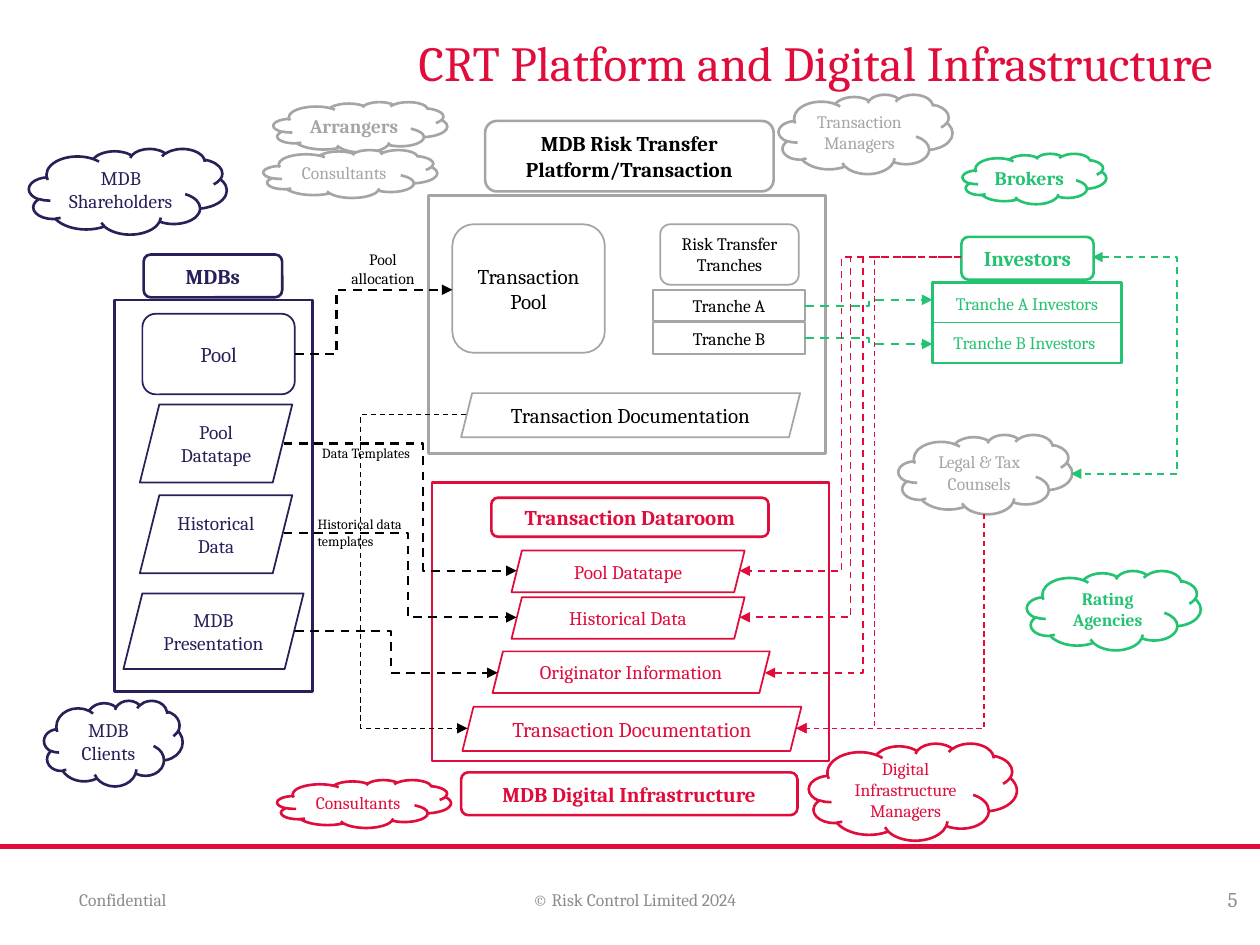
from lxml import etree
from pptx import Presentation
from pptx.dml.color import RGBColor
from pptx.enum.dml import MSO_LINE
from pptx.enum.shapes import MSO_CONNECTOR, MSO_SHAPE
from pptx.enum.text import MSO_ANCHOR, PP_ALIGN
from pptx.oxml.ns import qn
from pptx.util import Pt

PX = 9144
FONT = "Cambria"
COLORS = {
    "red": "E00D3C", "navy": "262159", "gray": "A5A5A5",
    "green": "24C371", "black": "000000", "white": "FFFFFF", "note": "8C8C8C",
}
RECT, ROUND = MSO_SHAPE.RECTANGLE, MSO_SHAPE.ROUNDED_RECTANGLE
SLANT, CLOUD = MSO_SHAPE.PARALLELOGRAM, MSO_SHAPE.CLOUD
STRAIGHT, ELBOW = MSO_CONNECTOR.STRAIGHT, MSO_CONNECTOR.ELBOW
DASH = MSO_LINE.DASH
LEFT, CENTER, RIGHT = PP_ALIGN.LEFT, PP_ALIGN.CENTER, PP_ALIGN.RIGHT
TOP, MIDDLE = MSO_ANCHOR.TOP, MSO_ANCHOR.MIDDLE


def emu(*sizes):
    return [size * PX for size in sizes]


def tint(name):
    return RGBColor.from_string(COLORS[name])


def write(shape, text, size, color, bold=False, align=CENTER, pad=(4, 4), anchor=MIDDLE):
    frame = shape.text_frame
    frame.word_wrap = True
    frame.vertical_anchor = anchor
    frame.margin_left = frame.margin_right = pad[0] * PX
    frame.margin_top = frame.margin_bottom = pad[1] * PX
    para = frame.paragraphs[0]
    para.text = text
    para.alignment = align
    font = para.font
    font.name, font.size, font.bold = FONT, Pt(size), bold
    font.color.rgb = tint(color)


def label(slide, box, text, size, color, **style):
    write(slide.shapes.add_textbox(*emu(*box)), text, size, color, **style)


def draw(slide, kind, box, color, width=1, fill=None):
    shape = slide.shapes.add_shape(kind, *emu(*box))
    shape.shadow.inherit = False
    if fill:
        shape.fill.solid()
        shape.fill.fore_color.rgb = tint(fill)
    else:
        shape.fill.background()
    shape.line.color.rgb = tint(color)
    shape.line.width = Pt(width)
    return shape


def link(slide, kind, ends, color, width):
    wire = slide.shapes.add_connector(kind, *emu(*ends))
    wire.line.color.rgb = tint(color)
    wire.line.width = Pt(width)
    etree.SubElement(wire._element.spPr, qn("a:effectLst"))
    return wire


def bend(slide, start, end, via, color, width, both=False):
    wire = link(slide, ELBOW, (*start, *end), color, width)
    wire.line.dash_style = DASH
    props = wire._element.spPr
    ratio = round(100000 * (via - start[0]) / (end[0] - start[0]))
    guides = props.find(qn("a:prstGeom")).find(qn("a:avLst"))
    etree.SubElement(guides, qn("a:gd"), name="adj1", fmla=f"val {ratio}")
    line = props.find(qn("a:ln"))
    for tag in ("a:headEnd", "a:tailEnd") if both else ("a:tailEnd",):
        etree.SubElement(line, qn(tag), type="triangle")


def header(slide, box, text, color, ink=None):
    shape = draw(slide, ROUND, box, color, 1.5, "white")
    write(shape, text, 12, ink or color, bold=True, pad=(10, 5))


def master(slide, x, y, w, h):
    link(slide, STRAIGHT, (x, y + 672, x + w, y + 672), "red", 2.5)
    notes = [
        (759, 233, "5", 12, RIGHT),
        (53, 233, "Confidential", 10, LEFT),
        (345, 317, "© Risk Control Limited 2024", 10, CENTER),
    ]
    for left, wide, text, size, align in notes:
        label(slide, (x + left, y + 694, wide, 40), text, size, "note", align=align, pad=(10, 5))
    label(slide, (x + 70, y + 22, 900, 79), "CRT Platform and Digital Infrastructure",
          28, "red", align=RIGHT, pad=(8, 4), anchor=TOP)


def banks(slide, x, y, w, h):
    draw(slide, RECT, (x, y, w, h), "navy", 1.5)
    header(slide, (x + 23, y - 36, 110, 34), "MDBs", "navy")
    pool = draw(slide, ROUND, (x + 22, y + 11, 121, 64), "navy")
    write(pool, "Pool", 12, "navy")
    parts = [
        (20, 83, 121, 62, "Pool Datatape"),
        (20, 155, 121, 62, "Historical\nData"),
        (7, 233, 143, 60, "MDB\nPresentation"),
    ]
    for left, top, wide, high, text in parts:
        write(draw(slide, SLANT, (x + left, y + top, wide, high), "navy"), text, 11, "navy")


def platform(slide, x, y, w, h):
    draw(slide, RECT, (x, y, w, h), "gray", 1.5, "white")
    header(slide, (x + 45, y - 59, 229, 56), "MDB Risk Transfer\nPlatform/Transaction", "gray", "black")
    parts = [
        (ROUND, 19, 23, 121, 102, "Transaction Pool", 12),
        (SLANT, 26, 157, 269, 35, "Transaction Documentation", 12),
        (ROUND, 184, 23, 110, 48, "Risk Transfer Tranches", 10),
        (RECT, 178, 75, 121, 25, "Tranche A", 10),
        (RECT, 178, 101, 121, 25, "Tranche B", 10),
    ]
    for kind, left, top, wide, high, text, size in parts:
        shape = draw(slide, kind, (x + left, y + top, wide, high), "gray")
        write(shape, text, size, "black", pad=(10, 5) if kind == ROUND else (4, 4))


def buyers(slide, x, y, w, h):
    header(slide, (x + 23, y - 36, 105, 34), "Investors", "green")
    frame = draw(slide, RECT, (x, y, w, h), "green", 1.5)
    label(slide, (x, y + 4, w, 25), "Tranche A Investors", 10, "green")
    label(slide, (x - 2, y + 35, w, 25), "Tranche B Investors", 10, "green")
    middle = y + h // 2
    split = link(slide, STRAIGHT, (x, middle, x + w, middle), "green", 1)
    split.begin_connect(frame, 1)
    split.end_connect(frame, 3)


def dataroom(slide, x, y, w, h):
    draw(slide, RECT, (x, y, w, h), "red", 1.5, "white")
    header(slide, (x + 47, y + 12, 220, 31), "Transaction Dataroom", "red")
    header(slide, (x + 23, y + 230, 267, 34), "MDB Digital Infrastructure", "red")
    parts = [
        (63, 54, 185, 33, "Pool Datatape", 11),
        (63, 91, 185, 33, "Historical Data", 11),
        (48, 134, 220, 33, "Originator Information", 11),
        (24, 178, 269, 35, "Transaction Documentation", 12),
    ]
    for left, top, wide, high, text, size in parts:
        write(draw(slide, SLANT, (x + left, y + top, wide, high), "red"), text, size, "red")


def clouds(slide, x, y):
    parts = [
        (23, 118, 157, 68, "MDB Shareholders", 11, "navy", False),
        (217, 81, 138, 40, "Arrangers", 11, "gray", True),
        (209, 119, 138, 38, "Consultants", 10, "gray", False),
        (618, 75, 138, 63, "Transaction Managers", 10, "gray", False),
        (220, 619, 138, 38, "Consultants", 10, "red", False),
        (642, 590, 165, 77, "Digital Infrastructure Managers", 10, "red", False),
        (713, 345, 138, 63, "Legal & Tax Counsels", 10, "gray", False),
        (764, 122, 114, 40, "Brokers", 11, "green", True),
        (815, 453, 138, 63, "Rating Agencies", 10, "green", True),
        (35, 556, 110, 68, "MDB Clients", 11, "navy", False),
    ]
    for left, top, wide, high, text, size, color, bold in parts:
        shape = draw(slide, CLOUD, (x + left, y + top, wide, high), color, 1.5, "white")
        write(shape, text, size, color, bold=bold, pad=(0, 0) if high == 77 else (4, 4))


def flows(slide, x, y):
    wires = [
        (225, 352, 410, 453, 336, "black", 1.25),
        (234, 281, 359, 230, 267, "black", 1.25),
        (225, 423, 410, 490, 324, "black", 1.25),
        (234, 501, 395, 534, 310, "black", 1.25),
        (370, 329, 371, 578, 285, "black", 0.75),
        (639, 243, 740, 238, 690, "green", 1.25),
        (639, 268, 740, 273, 690, "green", 1.25),
        (763, 204, 587, 453, 668, "red", 1),
        (763, 204, 587, 490, 675, "red", 1),
        (763, 204, 607, 534, 685, "red", 1),
        (763, 204, 632, 578, 694, "red", 0.75),
        (867, 204, 850, 376, 934, "green", 1),
        (781, 408, 632, 578, 781, "red", 0.75),
    ]
    for ax, ay, bx, by, via, color, width in wires:
        bend(slide, (x + ax, y + ay), (x + bx, y + by), x + via, color, width, via == 934)
    label(slide, (x + 266, y + 194, 76, 38), "Pool\nallocation", 9, "black")
    label(slide, (x + 240, y + 349, 101, 21), "Data Templates", 8, "black")
    label(slide, (x + 248, y + 405, 92, 35), "Historical data templates", 8, "black", align=LEFT)


def main():
    deck = Presentation()
    deck.slide_width, deck.slide_height = emu(1000, 750)
    slide = deck.slides.add_slide(deck.slide_layouts[6])
    master(slide, 0, 0, 1000, 750)
    banks(slide, 91, 238, 157, 311)
    platform(slide, 340, 155, 315, 205)
    buyers(slide, 740, 224, 150, 64)
    dataroom(slide, 343, 383, 315, 221)
    clouds(slide, 0, 0)
    flows(slide, 0, 0)
    deck.save("out.pptx")


if __name__ == "__main__":
    main()
